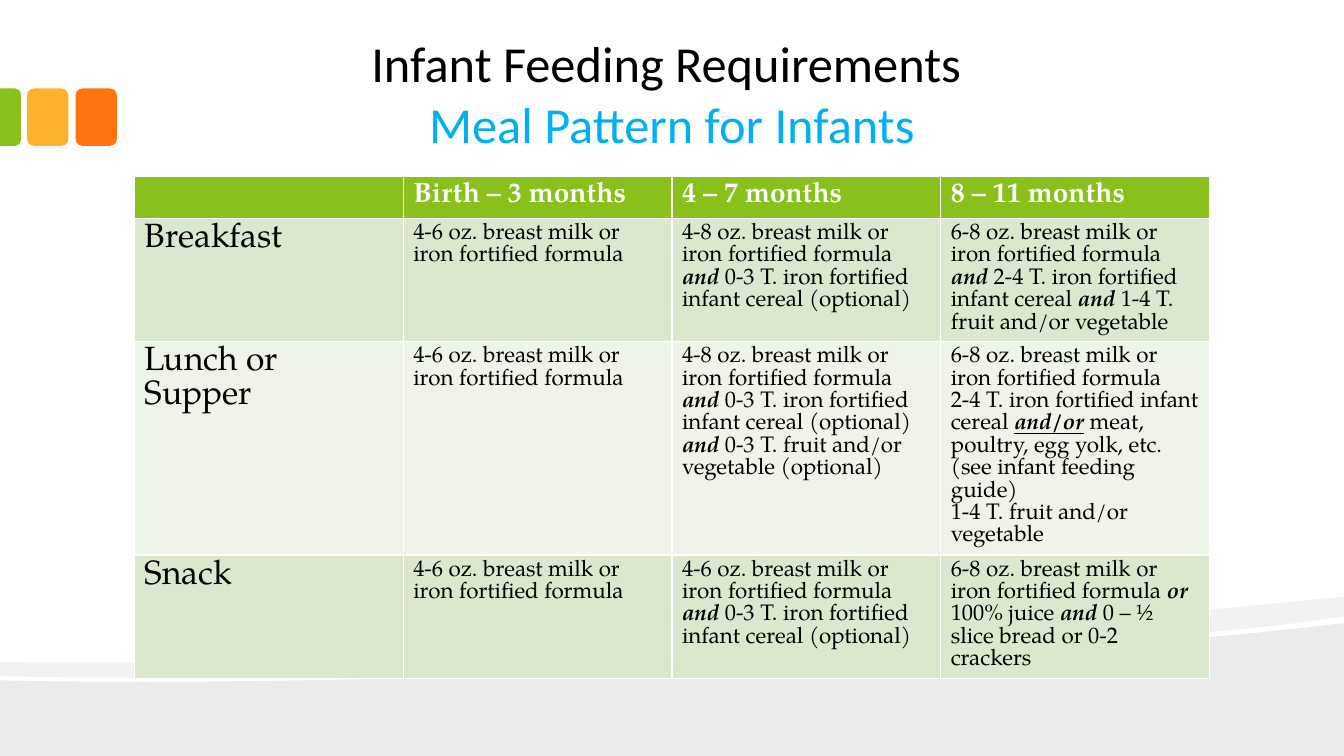
"""Build the infant meal pattern slide."""
from dataclasses import dataclass

from lxml import etree
from pptx import Presentation
from pptx.dml.color import RGBColor
from pptx.enum import shapes, text
from pptx.oxml import ns
from pptx.util import Pt

TITLE = ("Infant Feeding Requirements ", "Meal Pattern for Infants")
FORMULA = "4-6 oz. breast milk or iron fortified formula"
MEALS = [
    ["", "Birth – 3 months", "4 – 7 months", "8 – 11 months"],
    ["Breakfast", FORMULA,
     "4-8 oz. breast milk or iron fortified formula *and* 0-3 T. iron fortified "
     "infant cereal (optional)",
     "6-8 oz. breast milk or iron fortified formula *and* 2-4 T. iron fortified "
     "infant cereal *and* 1-4 T. fruit and/or vegetable"],
    ["Lunch or Supper", FORMULA,
     "4-8 oz. breast milk or iron fortified formula *and* 0-3 T. iron fortified "
     "infant cereal (optional) *and* 0-3 T. fruit and/or vegetable (optional)",
     "6-8 oz. breast milk or iron fortified formula\n"
     "2-4 T. iron fortified infant cereal *and/or* meat, poultry, egg yolk, etc. "
     "(see infant feeding guide)\n1-4 T. fruit and/or vegetable"],
    ["Snack", FORMULA,
     FORMULA + " *and* 0-3 T. iron fortified infant cereal (optional)",
     "6-8 oz. breast milk or iron fortified formula *or*\n"
     "100% juice *and* 0 – ½ slice bread or 0-2 crackers"],
]
ROW_HEIGHTS = (30, 88, 152.5, 88)
TABLE_LEFT, TABLE_TOP, TABLE_WIDTH = 96, 126, 768
SLIDE_WIDTH, SLIDE_HEIGHT = 960, 540

LOWER_WAVE = [[(0, 486), (253.4, 491.8), (750.2, 471.6), (960, 445)],
              [(960, 540)], [(0, 540)]]
UPPER_WAVE = [[(960, 426.2)], [(960, 440.6), (903.6, 448.6), (827.3, 455.8), (740.9, 461.5)],
              [(740.9, 461.5), (502.6, 477.4), (185.8, 487.4), (0, 483.1)],
              [(0, 473), (469.4, 476.6), (699.1, 451.4), (960, 426.2)]]


@dataclass(frozen=True)
class Theme:
    """Colours, fonts and type sizes."""
    black: str = "000000"
    white: str = "FFFFFF"
    blue: str = "00B0F0"
    green: str = "89C01C"
    amber: str = "FCB22C"
    orange: str = "FE750E"
    bands: tuple = ("EDF4E8", "DAE8CD")
    title_font: str = "Calibri"
    body_font: str = "TeX Gyre Pagella"
    title_size: int = 36
    header_size: int = 20
    meal_size: int = 24
    body_size: int = 16


THEME = Theme()


def style_span(span, font, size, color):
    """Apply font, size and colour to a run."""
    span.font.name = font
    span.font.size = Pt(size)
    span.font.color.rgb = RGBColor.from_string(color)


def paint(shape, color, opacity=100):
    """Fill a shape without line or shadow."""
    shape.shadow.inherit = False
    shape.line.fill.background()
    shape.fill.solid()
    shape.fill.fore_color.rgb = RGBColor.from_string(color)
    if opacity < 100:
        tint = shape.element.spPr.find(".//" + ns.qn("a:srgbClr"))
        etree.SubElement(tint, ns.qn("a:alpha")).set("val", str(opacity * 1000))


def trace(segment, steps=24):
    """Return points along a cubic curve, or the single corner given."""
    if len(segment) == 1:
        return segment
    points = []
    for step in range(steps + 1):
        t = step / steps
        weights = ((1 - t) ** 3, 3 * t * (1 - t) ** 2, 3 * t * t * (1 - t), t ** 3)
        points.append(tuple(sum(w * point[axis] for w, point in zip(weights, segment))
                            for axis in (0, 1)))
    return points


def add_wave(page, segments, opacity):
    """Draw a translucent wave from curves and corners."""
    points = [(Pt(x), Pt(y)) for segment in segments for x, y in trace(segment)]
    builder = page.shapes.build_freeform(*points[0])
    builder.add_line_segments(points[1:], close=True)
    paint(builder.convert_to_shape(), THEME.black, opacity)


def add_tabs(page):
    """Draw the three coloured tabs at the left edge."""
    for left, color in ((54, THEME.orange), (19.4, THEME.amber)):
        paint(page.shapes.add_shape(shapes.MSO_SHAPE.ROUNDED_RECTANGLE, Pt(left), Pt(63.2),
                                    Pt(29.5), Pt(41)), color)
    edge = page.shapes.add_shape(shapes.MSO_SHAPE.ROUND_2_SAME_RECTANGLE,
                                 Pt(-13.1), Pt(76.2), Pt(41), Pt(15))
    edge.rotation = 90
    edge.adjustments[0] = 0.29
    paint(edge, THEME.green)


def fill_title(box):
    """Place and format the two-line title."""
    box.left, box.top, box.width, box.height = Pt(96), Pt(12.2), Pt(768), Pt(102.2)
    frame = box.text_frame
    frame.text = "\v".join(TITLE)
    frame.word_wrap = True
    frame.auto_size = text.MSO_AUTO_SIZE.NONE
    frame.vertical_anchor = text.MSO_ANCHOR.BOTTOM
    frame.margin_left = frame.margin_right = Pt(9.4)
    frame.margin_top = frame.margin_bottom = Pt(5)
    para = frame.paragraphs[0]
    para.alignment = text.PP_ALIGN.CENTER
    for span, color in zip(para.runs, (THEME.black, THEME.blue)):
        style_span(span, THEME.title_font, THEME.title_size, color)


def fill_cell(cell, content, row, column):
    """Write one cell, setting text between asterisks in bold italics."""
    header = row == 0
    size = THEME.header_size if header else THEME.body_size if column else THEME.meal_size
    cell.fill.solid()
    cell.fill.fore_color.rgb = RGBColor.from_string(
        THEME.green if header else THEME.bands[row % 2])
    for index, line in enumerate(content.split("\n")):
        frame = cell.text_frame
        para = frame.add_paragraph() if index else frame.paragraphs[0]
        para.line_spacing = Pt(size)
        for part, words in enumerate(line.split("*")):
            if words:
                span = para.add_run()
                span.text = words
                style_span(span, THEME.body_font, size, THEME.white if header else THEME.black)
                emphasis = part % 2 == 1
                span.font.bold = header or emphasis
                span.font.italic = emphasis
                span.font.underline = emphasis and words == "and/or"


def add_meals(page):
    """Add the meal pattern table."""
    columns = len(MEALS[0])
    table = page.shapes.add_table(len(MEALS), columns, Pt(TABLE_LEFT), Pt(TABLE_TOP),
                                  Pt(TABLE_WIDTH), Pt(sum(ROW_HEIGHTS))).table
    for column in table.columns:
        column.width = Pt(TABLE_WIDTH / columns)
    for row, contents in enumerate(MEALS):
        table.rows[row].height = Pt(ROW_HEIGHTS[row])
        for column, content in enumerate(contents):
            fill_cell(table.cell(row, column), content, row, column)


def main():
    """Build and save the deck."""
    deck = Presentation()
    deck.slide_width, deck.slide_height = Pt(SLIDE_WIDTH), Pt(SLIDE_HEIGHT)
    page = deck.slides.add_slide(deck.slide_layouts[5])
    add_wave(page, LOWER_WAVE, 8)
    add_wave(page, UPPER_WAVE, 5)
    add_tabs(page)
    fill_title(page.shapes.title)
    add_meals(page)
    deck.save("out.pptx")


if __name__ == "__main__":
    main()
